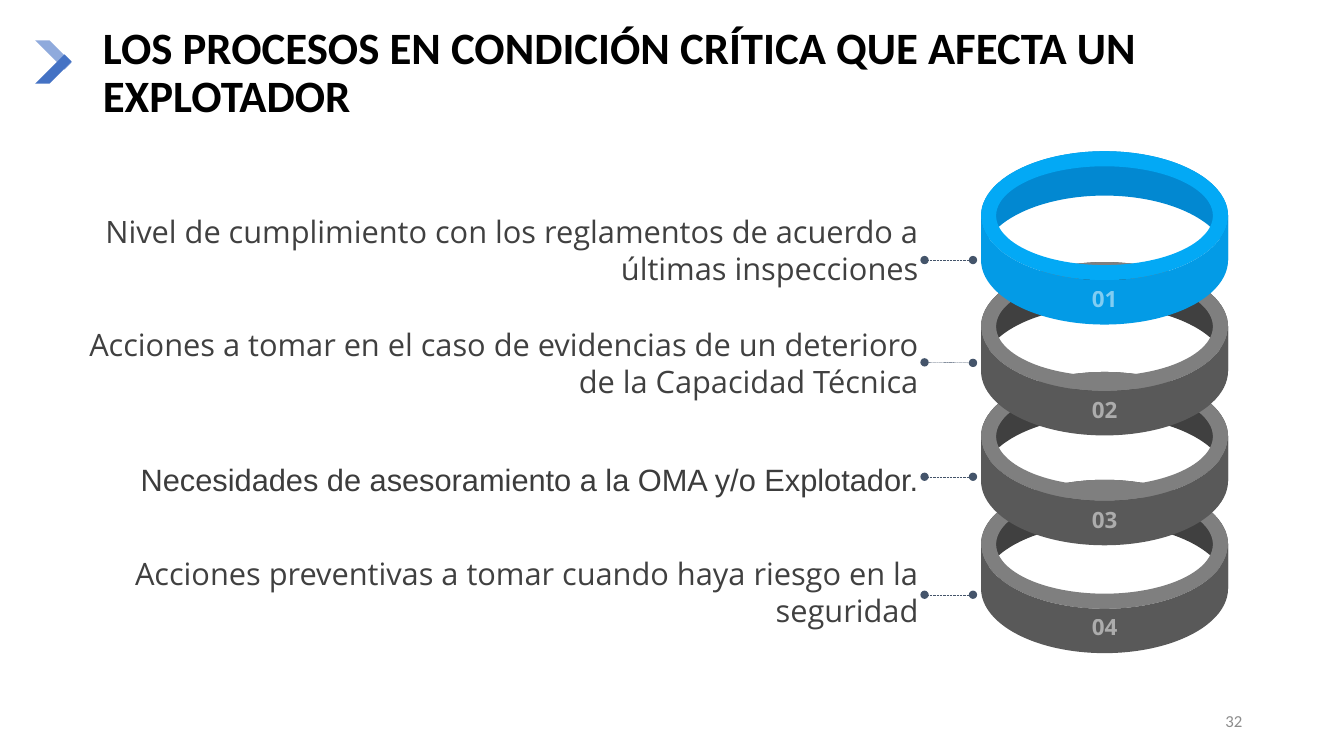
from lxml.etree import SubElement
from pptx import Presentation
from pptx.dml.color import RGBColor
from pptx.enum.dml import MSO_LINE
from pptx.enum.shapes import MSO_CONNECTOR, MSO_SHAPE
from pptx.enum.text import MSO_ANCHOR, MSO_AUTO_SIZE, PP_ALIGN
from pptx.oxml.ns import qn
from pptx.util import Pt

PX = 9144
HALF_TURN = 180 * 60000
RING_WIDTH, RING_RADIUS, RIM, BAND = 245, 64, 15, 44
GREY = ("404040", "7F7F7F", "595959")
BLUE = ("0288D1", "03A9F5", "039BE6")
ROWS = [
    ("Nivel de cumplimiento con los reglamentos de acuerdo a últimas inspecciones",
     "Open Sans", "404040", 205, 85, 258, 150, BLUE),
    ("Acciones a tomar en el caso de evidencias de un deterioro de la Capacidad Técnica",
     "Open Sans", "404040", 317, 85, 360, 260, GREY),
    ("Necesidades de asesoramiento a la OMA y/o Explotador.",
     "Arial", "3C3C3C", 451, 48, 473, 369, GREY),
    ("Acciones preventivas a tomar cuando haya riesgo en la seguridad",
     "Open Sans", "404040", 544, 85, 590, 476, GREY),
]


def px(*lengths):
    """Turn px lengths into EMU."""
    return [round(length * PX) for length in lengths]


def color(hex_text):
    """Turn a hex string into a colour."""
    return RGBColor.from_string(hex_text)


def write(text_frame, text, font_name, size, hex_text, align, bold=False, inset=0):
    """Fill a text frame with one formatted paragraph."""
    text_frame.word_wrap = True
    text_frame.auto_size = MSO_AUTO_SIZE.NONE
    text_frame.vertical_anchor = MSO_ANCHOR.MIDDLE
    text_frame.margin_left = text_frame.margin_right = inset * PX
    text_frame.margin_top = text_frame.margin_bottom = inset * PX
    text_frame.text = text
    paragraph = text_frame.paragraphs[0]
    paragraph.alignment = align
    font = paragraph.runs[0].font
    font.name, font.size, font.bold = font_name, Pt(size), bold
    font.color.rgb = color(hex_text)
    return paragraph


def paint(shape, hex_text):
    """Give a shape a plain fill without line or shadow."""
    shape.shadow.inherit = False
    shape.fill.solid()
    shape.fill.fore_color.rgb = color(hex_text)
    shape.line.fill.background()


def add_polygon(slide, points, hex_text):
    """Draw a filled polygon from px points."""
    corners = [tuple(px(*point)) for point in points]
    builder = slide.shapes.build_freeform(*corners[0])
    builder.add_line_segments(corners[1:], close=True)
    shape = builder.convert_to_shape()
    paint(shape, hex_text)
    return shape


def add_wall(slide, left, top, first_y, turn, hex_text):
    """Draw a curved band that bends up (turn 1) or down (turn -1)."""
    right, bottom = left + RING_WIDTH, top + RING_RADIUS + BAND
    shape = add_polygon(
        slide, [(left, top), (right, top), (right, bottom), (left, bottom)], hex_text)
    outline = next(shape._element.iter(qn("a:path")))
    for segment in list(outline):
        outline.remove(segment)

    def add_point(tag, x, y):
        SubElement(SubElement(outline, qn(tag)), qn("a:pt"), x=str(x * PX), y=str(y * PX))

    def add_arc(start, sweep):
        SubElement(outline, qn("a:arcTo"), wR=str(RING_WIDTH * PX // 2),
                   hR=str(RING_RADIUS * PX), stAng=str(start), swAng=str(sweep))

    add_point("a:moveTo", 0, first_y)
    add_arc(HALF_TURN, turn * HALF_TURN)
    add_point("a:lnTo", RING_WIDTH, first_y + BAND)
    add_arc(0, -turn * HALF_TURN)
    SubElement(outline, qn("a:close"))


def add_ring(slide, left, top, number, colors):
    """Draw one ring: inner wall, rim, outer wall and number."""
    inner_color, rim_color, outer_color = colors
    add_wall(slide, left, top, RING_RADIUS, 1, inner_color)
    rim = slide.shapes.add_shape(
        MSO_SHAPE.DONUT, *px(left, top, RING_WIDTH, 2 * RING_RADIUS))
    rim.adjustments[0] = RIM / (2 * RING_RADIUS)
    paint(rim, rim_color)
    add_wall(slide, left, top + RING_RADIUS, 0, -1, outer_color)
    box = slide.shapes.add_textbox(*px(left, top + 131, RING_WIDTH, 30))
    paragraph = write(box.text_frame, f"{number:02}", "Open Sans", 16, "FFFFFF",
                      PP_ALIGN.CENTER, bold=True)
    for element in paragraph.runs[0].font._element.iter(qn("a:srgbClr")):
        SubElement(element, qn("a:alpha"), val="50000")


def add_label(slide, left, top, width, height, text, font_name, hex_text):
    """Place a right-aligned statement."""
    box = slide.shapes.add_textbox(*px(left, top, width, height))
    write(box.text_frame, text, font_name, 22, hex_text, PP_ALIGN.RIGHT, inset=6)
    return box


def add_leader(slide, label, start_x, end_x, y):
    """Draw a dashed line with round ends from a ring to its label."""
    connector = slide.shapes.add_connector(
        MSO_CONNECTOR.STRAIGHT, *px(start_x, y, end_x, y))
    if abs(label.top + label.height / 2 - y * PX) <= PX:
        connector.end_connect(label, 3)
    connector.line.color.rgb = color("44546A")
    connector.line.width = Pt(0.25)
    connector.line.dash_style = MSO_LINE.SQUARE_DOT
    line = connector.line._get_or_add_ln()
    for end in ("a:headEnd", "a:tailEnd"):
        SubElement(line, qn(end), type="oval")
    SubElement(connector._element.spPr, qn("a:effectLst"))


def add_chevron(slide, left, top):
    """Draw the two-tone chevron beside the title."""
    for edge, step, hex_text in ((top, 1, "8FAADC"), (top + 43, -1, "4472C4")):
        offsets = [(0, 0), (29, 29), (36, 22), (14, 0)]
        add_polygon(slide, [(left + x, edge + step * y) for x, y in offsets], hex_text)


def add_heading(slide, left, top, width, height):
    """Place the title."""
    title = slide.shapes.title
    title.left, title.top, title.width, title.height = px(left, top, width, height)
    paragraph = write(
        title.text_frame, "LOS PROCESOS EN CONDICIÓN CRÍTICA QUE AFECTA UN EXPLOTADOR",
        "Calibri", 32, "000000", PP_ALIGN.LEFT, bold=True, inset=10)
    paragraph.line_spacing = 0.9


def add_page_number(slide, left, top, width, height):
    """Place the page number."""
    box = slide.shapes.add_textbox(*px(left, top, width, height))
    write(box.text_frame, "32", "Calibri", 12, "8C8C8C", PP_ALIGN.RIGHT, inset=10)


def main():
    """Build and save the slide."""
    presentation = Presentation()
    presentation.slide_width, presentation.slide_height = px(1333, 750)
    slide = presentation.slides.add_slide(presentation.slide_layouts[5])
    add_chevron(slide, 35, 40)
    add_heading(slide, 92, 1, 1150, 145)
    add_page_number(slide, 942, 695, 300, 40)
    labels = [add_label(slide, 46, top, 871, height, text, font_name, hex_text)
              for text, font_name, hex_text, top, height, *_ in ROWS]
    for number in range(len(ROWS), 0, -1):
        *_, ring_top, colors = ROWS[number - 1]
        add_ring(slide, 973, ring_top, number, colors)
    for label, row in zip(labels, ROWS):
        add_leader(slide, label, 965, 917, row[5])
    presentation.save("out.pptx")


if __name__ == "__main__":
    main()
